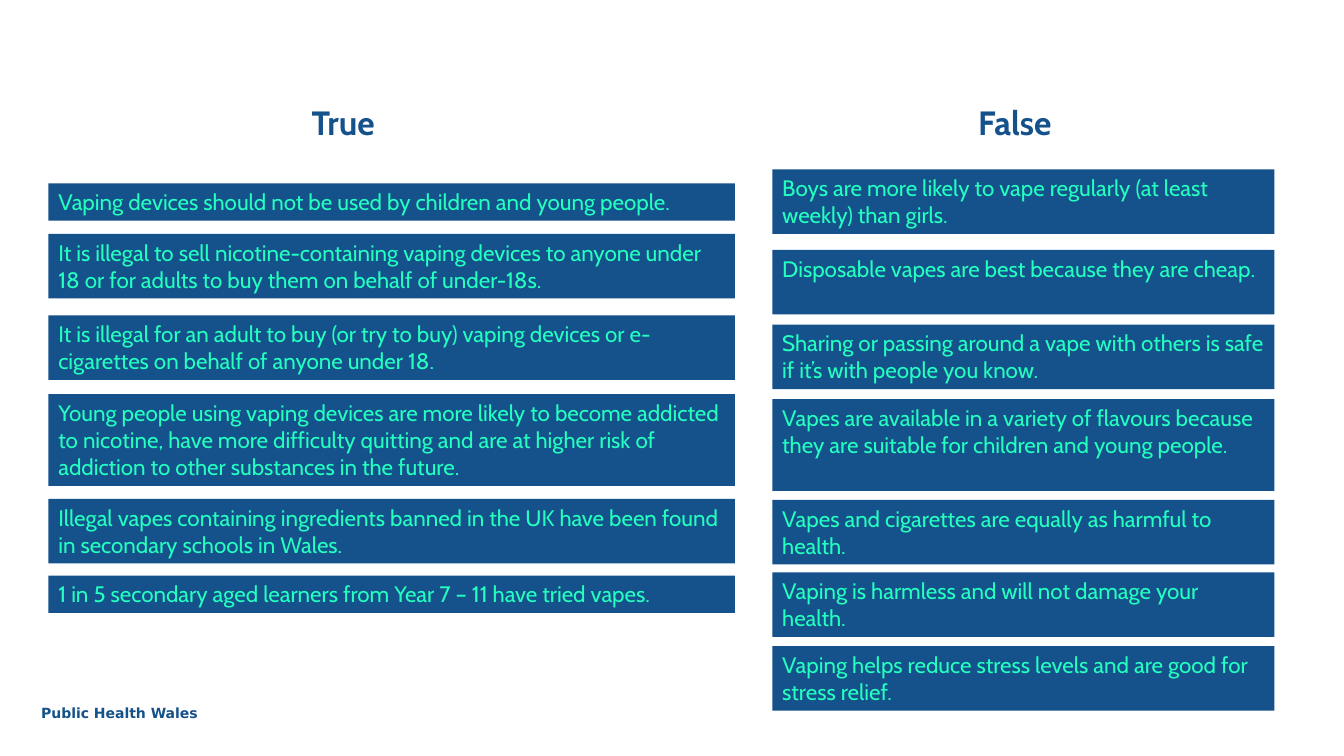
import pptx
import pptx.util
import pptx.dml.color
import pptx.enum.shapes
import pptx.enum.text
from dataclasses import dataclass

COLUMNS = [
    {
        "heading": "True", "heading_at": (2.99, 0.74, 1.78, 0.72),
        "placeholder": 1, "left": 0.48, "width": 6.81,
        "cards": [
            (1.82, 1, "Vaping devices should not be used by children and young people."),
            (2.32, 2, "It is illegal to sell nicotine-containing vaping devices to anyone under 18 "
                      "or for adults to buy them on behalf of under-18s."),
            (3.13, 2, "It is illegal for an adult to buy (or try to buy) vaping devices or "
                      "e-cigarettes on behalf of anyone under 18."),
            (3.91, 3, "Young people using vaping devices are more likely to become addicted to "
                      "nicotine, have more difficulty quitting and are at higher risk of addiction "
                      "to other substances in the future."),
            (4.95, 2, "Illegal vapes containing ingredients banned in the UK have been found in "
                      "secondary schools in Wales."),
            (5.71, 1, "1 in 5 secondary aged learners from Year 7 – 11 have tried vapes."),
        ],
    },
    {
        "heading": "False", "heading_at": (9.6, 0.97, 1.46, 0.49),
        "placeholder": 3, "left": 7.66, "width": 4.98,
        "cards": [
            (1.68, 2, "Boys are more likely to vape regularly (at least weekly) than girls."),
            (2.48, 2, "Disposable vapes are best because they are cheap."),
            (3.22, 2, "Sharing or passing around a vape with others is safe if it’s with people "
                      "you know."),
            (3.96, 3, "Vapes are available in a variety of flavours because they are suitable for "
                      "children and young people."),
            (4.96, 2, "Vapes and cigarettes are equally as harmful to health."),
            (5.68, 2, "Vaping is harmless and will not damage your health."),
            (6.41, 2, "Vaping helps reduce stress levels and are good for stress relief."),
        ],
    },
]
FOOTER = "Public Health Wales"
FOOTER_AT = (0.31, 6.94, 1.81, 0.27)
LINE_HEIGHT = 0.27
CARD_PADDING = 0.1


@dataclass
class Theme:
    navy: str = "15518B"
    mint: str = "24FFC0"
    font: str = "Cabin"
    footer_font: str = "DejaVu Sans"
    heading_size: int = 24
    card_size: int = 16
    footer_size: int = 10


THEME = Theme()


def rgb(value):
    return pptx.dml.color.RGBColor.from_string(value)


def inches(values):
    return [pptx.util.Inches(value) for value in values]


def write(shape, text, font, size, color, bold, anchor):
    frame = shape.text_frame
    frame.word_wrap = True
    frame.auto_size = pptx.enum.text.MSO_AUTO_SIZE.NONE
    frame.vertical_anchor = anchor
    frame.text = text
    para = frame.paragraphs[0]
    para.alignment = pptx.enum.text.PP_ALIGN.LEFT
    para.space_before = pptx.util.Pt(0)
    para.font.name = font
    para.font.size = pptx.util.Pt(size)
    para.font.bold = bold
    para.font.color.rgb = rgb(color)


def add_heading(page, column):
    heading = page.placeholders[column["placeholder"]]
    heading.left, heading.top, heading.width, heading.height = inches(column["heading_at"])
    write(heading, column["heading"], THEME.font, THEME.heading_size, THEME.navy, True,
          pptx.enum.text.MSO_ANCHOR.BOTTOM)


def add_card(page, left, top, width, lines, text):
    height = CARD_PADDING + lines * LINE_HEIGHT
    card = page.shapes.add_shape(pptx.enum.shapes.MSO_SHAPE.RECTANGLE,
                                 *inches((left, top, width, height)))
    card.shadow.inherit = False
    card.fill.solid()
    card.fill.fore_color.rgb = rgb(THEME.navy)
    card.line.fill.background()
    write(card, text, THEME.font, THEME.card_size, THEME.mint, False,
          pptx.enum.text.MSO_ANCHOR.TOP)


def main():
    deck = pptx.Presentation()
    deck.slide_width, deck.slide_height = inches((13.33, 7.5))
    page = deck.slides.add_slide(deck.slide_layouts.get_by_name("Comparison"))

    used = [column["placeholder"] for column in COLUMNS]
    for holder in list(page.placeholders):
        if holder.placeholder_format.idx not in used:
            holder.element.getparent().remove(holder.element)

    footer = page.shapes.add_textbox(*inches(FOOTER_AT))
    write(footer, FOOTER, THEME.footer_font, THEME.footer_size, THEME.navy, True,
          pptx.enum.text.MSO_ANCHOR.TOP)

    for column in COLUMNS:
        add_heading(page, column)
        for top, lines, text in column["cards"]:
            add_card(page, column["left"], top, column["width"], lines, text)

    deck.save("out.pptx")


if __name__ == "__main__":
    main()
